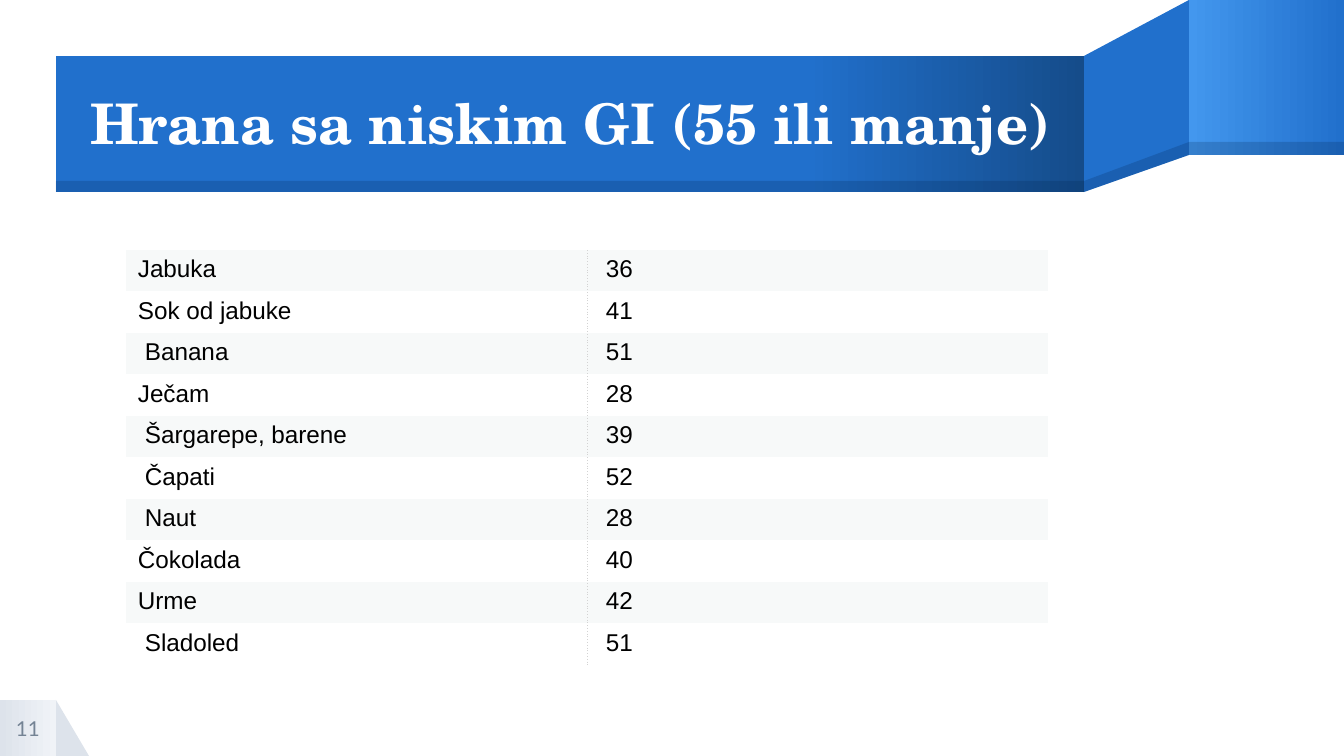
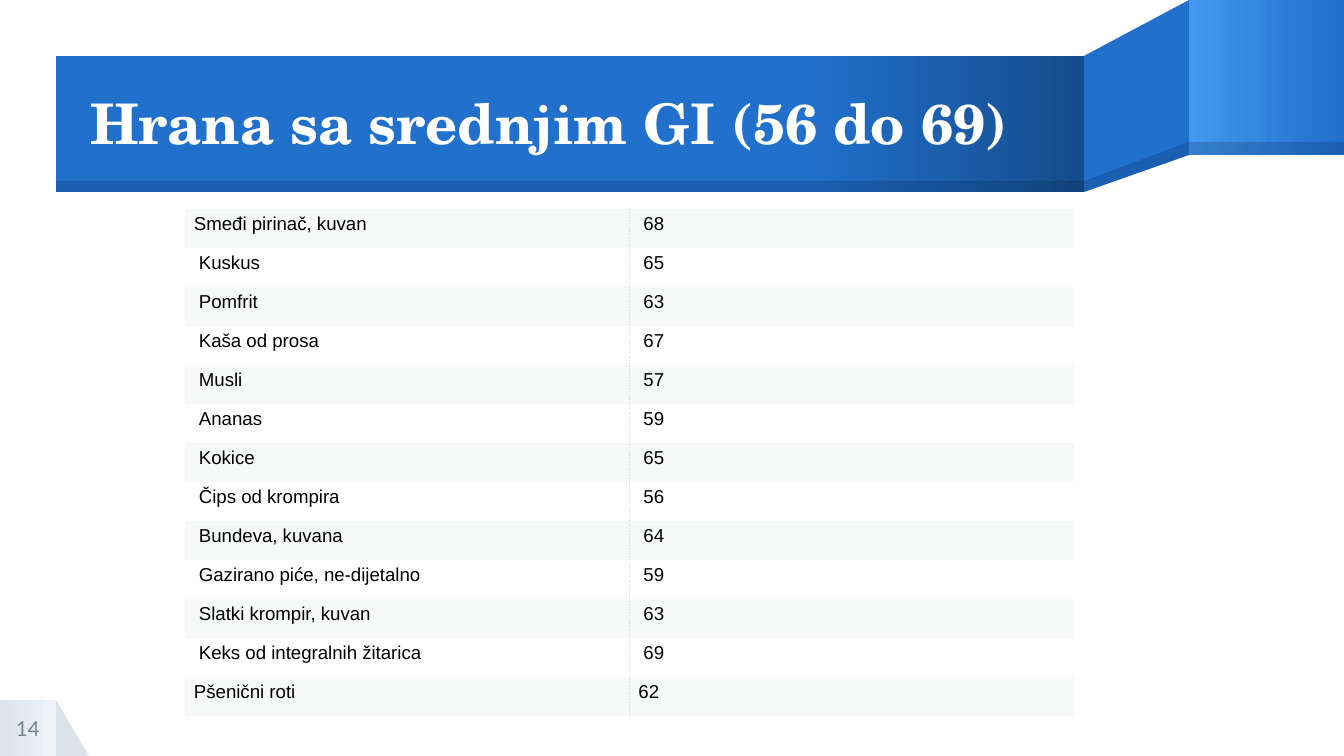
from copy import deepcopy

from pptx import Presentation
from pptx.dml.color import RGBColor
from pptx.enum.shapes import MSO_SHAPE
from pptx.enum.text import MSO_ANCHOR, PP_ALIGN
from pptx.oxml import parse_xml
from pptx.oxml.ns import nsdecls, qn
from pptx.util import Pt

# Content: foods and their glycemic index; "flush" lists cells without an indent
SLIDES = [
    {
        "title": "Hrana sa niskim GI (55 ili manje)",
        "number": "11",
        "table": (126, 250, 922, 415),
        "size": 13,
        "margins": (12, 6),
        "indent": 7,
        "flush": {"Jabuka", "Sok od jabuke", "Ječam", "Čokolada", "Urme"},
        "foods": [
            ("Jabuka", "36"), ("Sok od jabuke", "41"), ("Banana", "51"),
            ("Ječam", "28"), ("Šargarepe, barene", "39"), ("Čapati", "52"),
            ("Naut", "28"), ("Čokolada", "40"), ("Urme", "42"),
            ("Sladoled", "51"),
        ],
    },
    {
        "title": "Hrana sa srednjim GI (56 do 69)",
        "number": "14",
        "table": (185, 209, 889, 507),
        "size": 10,
        "margins": (9, 5),
        "indent": 5,
        "flush": {"Smeđi pirinač, kuvan", "Pšenični roti", "62"},
        "foods": [
            ("Smeđi pirinač, kuvan", "68"), ("Kuskus", "65"), ("Pomfrit", "63"),
            ("Kaša od prosa", "67"), ("Musli", "57"), ("Ananas", "59"),
            ("Kokice", "65"), ("Čips od krompira", "56"),
            ("Bundeva, kuvana", "64"), ("Gazirano piće, ne-dijetalno", "59"),
            ("Slatki krompir, kuvan", "63"), ("Keks od integralnih žitarica", "69"),
            ("Pšenični roti", "62"),
        ],
    },
]

# Shared look
SCALE = 914400 / 134.4
BLUE, LIGHT_BLUE, DARK_BLUE, SHADE = "2170CC", "4397EE", "154C8A", "001F46"
GREY, PALE_GREY, NUMBER_GREY = "DDE3EB", "F0F3F7", "748394"
WHITE, BLACK, STRIPE, DIVIDER = "FFFFFF", "000000", "F7F9F9", "D3D3D3"
TITLE_FONT, NUMBER_FONT, TABLE_FONT = "TeX Gyre Schola", "Lato", "Arial"
NO_STYLE = "{2D5ABB26-0587-4C30-8999-92F81FD0307C}"

NUMBER_BOX = (0, 700, 56, 56)
TITLE_BOX = (90, 58, 994, 136)
BAND = (56, 56, 1028, 136)
BAND_EDGE = (56, 181, 1028, 11)
FOLD = [(1189, 0), (1084, 56), (1084, 192), (1189, 155)]
FOLD_EDGE = [(1189, 142), (1084, 181), (1084, 192), (1189, 155)]
TAIL = (1189, 0, 155, 155)
TAIL_EDGE = (1189, 142, 155, 13)


def px(length):
    return round(length * SCALE)


def color(value):
    return RGBColor.from_string(value)


def paint(shape, fill, alpha=None):
    """Fill with one colour, or with a list of (position, colour) stops."""
    shape.shadow.inherit = False
    shape.line.fill.background()
    if isinstance(fill, str):
        shape.fill.solid()
        shape.fill.fore_color.rgb = color(fill)
        if alpha:
            rgb = shape._element.spPr.find(qn("a:solidFill"))[0]
            rgb.append(parse_xml(f'<a:alpha {nsdecls("a")} val="{alpha * 1000}"/>'))
        return
    shape.fill.gradient()
    shape.fill.gradient_angle = 0
    stops = shape._element.spPr.find(qn("a:gradFill")).find(qn("a:gsLst"))
    while len(stops) < len(fill):
        stops.append(deepcopy(stops[0]))
    for stop, (position, value) in zip(shape.fill.gradient_stops, fill):
        stop.position = position
        stop.color.rgb = color(value)


def add_block(slide, box, fill, alpha=None, kind=MSO_SHAPE.RECTANGLE):
    paint(slide.shapes.add_shape(kind, *map(px, box)), fill, alpha)


def add_outline(slide, points, fill, alpha=None):
    builder = slide.shapes.build_freeform(*points[0], scale=SCALE)
    builder.add_line_segments(points[1:], close=True)
    paint(builder.convert_to_shape(), fill, alpha)


def style(font, name, size, value, bold=False):
    font.name, font.size, font.bold = name, Pt(size), bold
    font.color.rgb = color(value)


def add_text(slide, box, text, *look):
    frame = slide.shapes.add_textbox(*map(px, box)).text_frame
    frame.word_wrap = True
    frame.vertical_anchor = MSO_ANCHOR.MIDDLE
    frame.margin_left = frame.margin_right = 0
    frame.margin_top = frame.margin_bottom = 0
    line = frame.paragraphs[0]
    line.text = text
    style(line.runs[0].font, *look)
    return line


def add_frame(slide, title, number):
    # Page corner
    add_block(slide, (56, 700, 33, 56), GREY, kind=MSO_SHAPE.RIGHT_TRIANGLE)
    add_block(slide, NUMBER_BOX, [(0, GREY), (1, PALE_GREY)])
    # Folded ribbon with its darker lower edge
    add_outline(slide, FOLD, BLUE)
    add_block(slide, TAIL, [(0, LIGHT_BLUE), (1, BLUE)])
    add_block(slide, BAND, [(0, BLUE), (0.73, BLUE), (1, DARK_BLUE)])
    add_outline(slide, FOLD_EDGE, SHADE, 20)
    for edge in (TAIL_EDGE, BAND_EDGE):
        add_block(slide, edge, SHADE, 20)
    # Title and page number
    add_text(slide, TITLE_BOX, title, TITLE_FONT, 30, WHITE, True).line_spacing = 0.9
    page = add_text(slide, NUMBER_BOX, number, NUMBER_FONT, 11, NUMBER_GREY)
    page.alignment = PP_ALIGN.CENTER


def add_divider(cell, side):
    cell._tc.get_or_add_tcPr().insert(0, parse_xml(
        f'<a:{side} {nsdecls("a")} w="6350"><a:solidFill><a:srgbClr val="{DIVIDER}"/>'
        f'</a:solidFill><a:prstDash val="dot"/></a:{side}>'))


def add_foods(slide, content):
    foods = content["foods"]
    left, top, width, height = content["table"]
    side, above = content["margins"]
    table = slide.shapes.add_table(
        len(foods), 2, px(left), px(top), px(width), px(height)).table
    table.first_row = table.horz_banding = False
    table._tbl.tblPr.find(qn("a:tableStyleId")).text = NO_STYLE
    for column in table.columns:
        column.width = px(width / 2)
    for r, food in enumerate(foods):
        table.rows[r].height = px(height / len(foods))
        for c, text in enumerate(food):
            cell = table.cell(r, c)
            indent = 0 if text in content["flush"] else content["indent"]
            cell.margin_left, cell.margin_right = px(side + indent), px(side)
            cell.margin_top = cell.margin_bottom = px(above)
            cell.fill.solid()
            cell.fill.fore_color.rgb = color(WHITE if r % 2 else STRIPE)
            add_divider(cell, "lnL" if c else "lnR")
            cell.text_frame.text = text
            run = cell.text_frame.paragraphs[0].runs[0]
            style(run.font, TABLE_FONT, content["size"], BLACK)


def main():
    deck = Presentation()
    deck.slide_width, deck.slide_height = px(1344), px(756)
    for content in SLIDES:
        slide = deck.slides.add_slide(deck.slide_layouts[6])
        add_frame(slide, content["title"], content["number"])
        add_foods(slide, content)
    deck.save("out.pptx")


if __name__ == "__main__":
    main()
